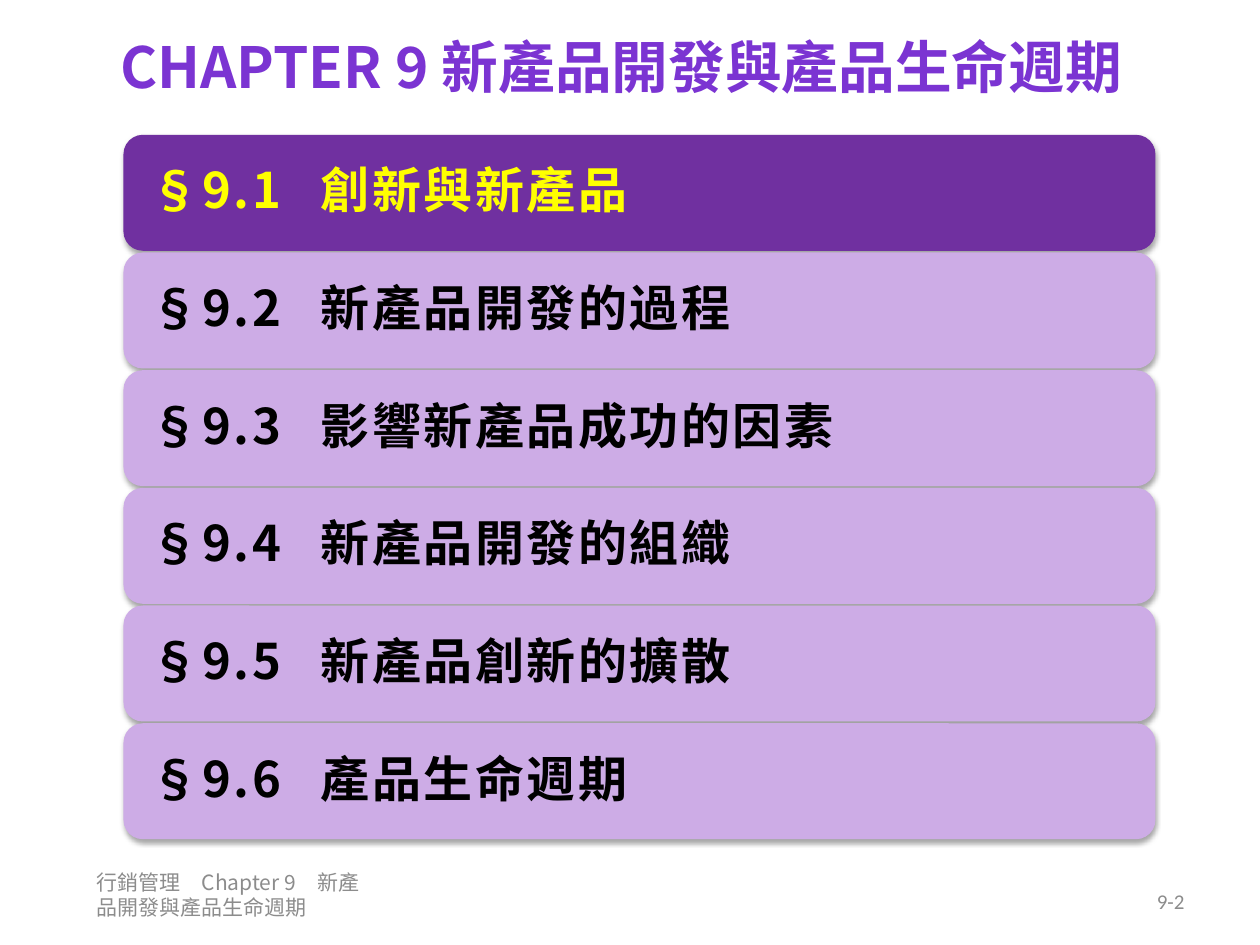
from dataclasses import dataclass

from lxml import etree
from pptx import Presentation
from pptx.dml.color import RGBColor
from pptx.enum.shapes import MSO_SHAPE
from pptx.enum.text import MSO_ANCHOR, PP_ALIGN
from pptx.oxml.ns import qn
from pptx.slide import Slide
from pptx.text.text import TextFrame
from pptx.util import Inches, Pt

ROUNDED = MSO_SHAPE.ROUNDED_RECTANGLE
MIDDLE = MSO_ANCHOR.MIDDLE
LEFT, CENTER, RIGHT = PP_ALIGN.LEFT, PP_ALIGN.CENTER, PP_ALIGN.RIGHT

TITLE_PURPLE = RGBColor(0x7B, 0x34, 0xD2)
DEEP_PURPLE = RGBColor(0x70, 0x30, 0xA0)
LILAC = RGBColor(0xCD, 0xAC, 0xE6)
YELLOW = RGBColor(0xFF, 0xFF, 0x00)
BLACK = RGBColor(0x00, 0x00, 0x00)
GRAY = RGBColor(0x8C, 0x8C, 0x8C)

CJK_FONT = "Noto Sans CJK SC"
LATIN_FONT = "Calibri"

BAR_LEFT, BAR_TOP, BAR_WIDTH, BAR_HEIGHT = 0.98, 1.07, 8.19, 0.92
BAR_PITCH = 0.934
NAME_TAB = 1.35


@dataclass(frozen=True)
class Section:
    number: str
    name: str
    current: bool = False


SECTIONS = [
    Section("§9.1", "創新與新產品", current=True),
    Section("§9.2", "新產品開發的過程"),
    Section("§9.3", "影響新產品成功的因素"),
    Section("§9.4", "新產品開發的組織"),
    Section("§9.5", "新產品創新的擴散"),
    Section("§9.6", "產品生命週期"),
]


def write_text(frame: TextFrame, text: str, *, size: float, color: RGBColor,
               font: str = CJK_FONT, bold: bool = False, align: PP_ALIGN = LEFT,
               spacing: float = 0, tab: float = 0) -> None:
    """Fill the frame with one paragraph; spacing is in points, tab in inches."""
    frame.word_wrap = True
    frame.vertical_anchor = MIDDLE
    paragraph = frame.paragraphs[0]
    paragraph.alignment = align
    if tab:
        properties = paragraph._p.get_or_add_pPr()
        tabs = etree.SubElement(properties, qn("a:tabLst"))
        etree.SubElement(tabs, qn("a:tab"), pos=str(Inches(tab)), algn="l")
    run = paragraph.add_run()
    run.text = text
    run.font.size = Pt(size)
    run.font.bold = bold
    run.font.color.rgb = color
    run.font.name = font
    run_properties = run._r.get_or_add_rPr()
    etree.SubElement(run_properties, qn("a:ea"), typeface=font)
    if spacing:
        run_properties.set("spc", str(round(spacing * 100)))


def add_label(slide: Slide, text: str, left: float, top: float, width: float,
              font: str = CJK_FONT, align: PP_ALIGN = LEFT) -> None:
    box = slide.shapes.add_textbox(Inches(left), Inches(top), Inches(width), Inches(0.4))
    write_text(box.text_frame, text, size=12, color=GRAY, font=font, align=align)


def add_section_bar(slide: Slide, section: Section, top: float) -> None:
    bar = slide.shapes.add_shape(ROUNDED, Inches(BAR_LEFT), Inches(top),
                                 Inches(BAR_WIDTH), Inches(BAR_HEIGHT))
    bar.fill.solid()
    bar.fill.fore_color.rgb = DEEP_PURPLE if section.current else LILAC
    bar.line.fill.background()

    bar.shadow.inherit = False
    effects = bar._element.spPr.find(qn("a:effectLst"))
    shadow = etree.SubElement(effects, qn("a:outerShdw"), blurRad=str(Pt(3.1)),
                              dist=str(Pt(1.8)), dir="5400000", rotWithShape="0")
    shadow_color = etree.SubElement(shadow, qn("a:srgbClr"), val="000000")
    etree.SubElement(shadow_color, qn("a:alpha"), val="35000")

    frame = bar.text_frame
    frame.margin_left = frame.margin_right = Inches(0.17)
    write_text(frame, f"{section.number}\t{section.name}", size=28, bold=True,
               color=YELLOW if section.current else BLACK, spacing=1.5, tab=NAME_TAB)
    frame.paragraphs[0].line_spacing = 0.9


def main() -> None:
    presentation = Presentation()
    presentation.slide_width, presentation.slide_height = Inches(10), Inches(7.5)
    slide = presentation.slides.add_slide(presentation.slide_layouts[5])

    title = slide.shapes.title
    title.left, title.top = Inches(0.43), Inches(0.04)
    title.width, title.height = Inches(9), Inches(0.96)
    write_text(title.text_frame, "CHAPTER 9 新產品開發與產品生命週期", size=32.4,
               color=TITLE_PURPLE, bold=True, align=CENTER)

    for index, section in enumerate(SECTIONS):
        add_section_bar(slide, section, BAR_TOP + index * BAR_PITCH)

    add_label(slide, "行銷管理　Chapter 9　新產品開發與產品生命週期", 0.67, 6.9, 2.44)
    add_label(slide, "9-2", 7.17, 6.95, 2.33, font=LATIN_FONT, align=RIGHT)
    presentation.save("out.pptx")


if __name__ == "__main__":
    main()
